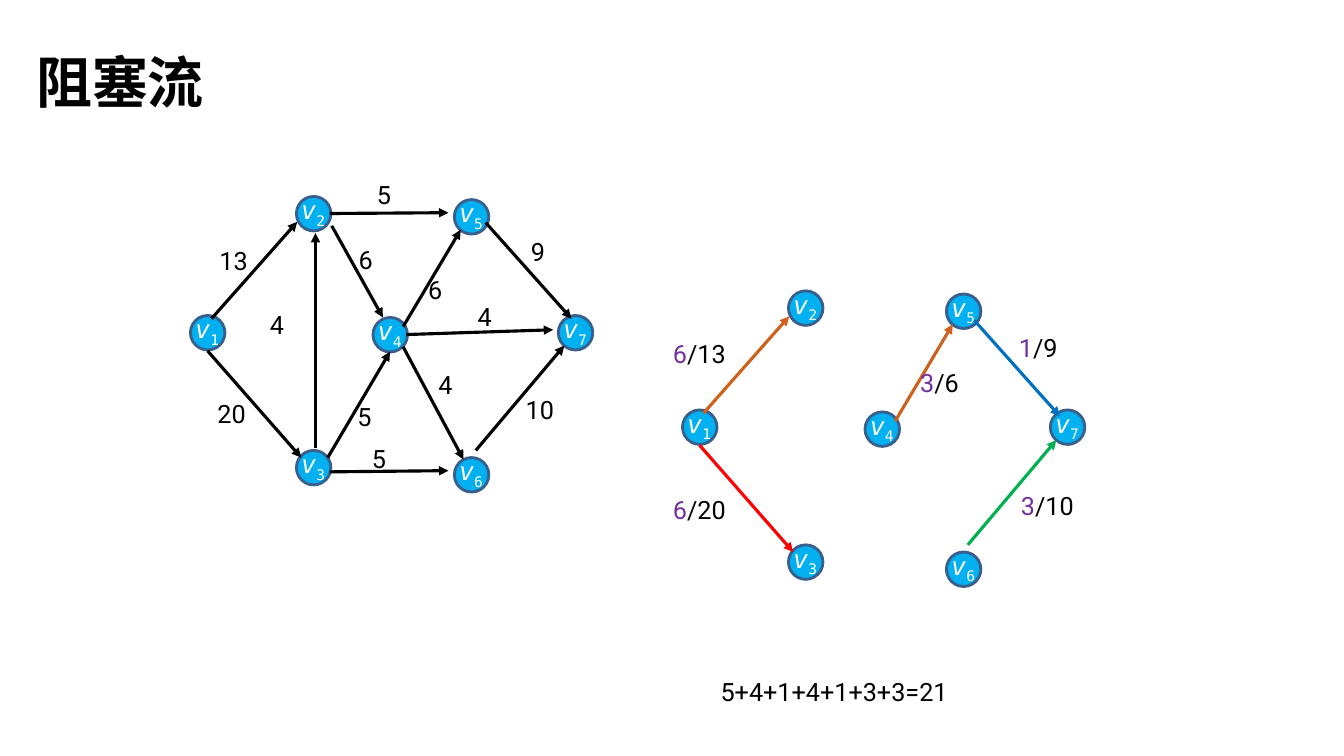
from lxml import etree
from pptx import Presentation
from pptx.dml.color import RGBColor
from pptx.enum.shapes import MSO_CONNECTOR, MSO_SHAPE
from pptx.enum.text import MSO_ANCHOR, MSO_AUTO_SIZE
from pptx.oxml.ns import qn
from pptx.util import Cm, Pt

OVAL = MSO_SHAPE.OVAL
LINE = MSO_CONNECTOR.STRAIGHT
TOP = MSO_ANCHOR.TOP
MIDDLE = MSO_ANCHOR.MIDDLE
GROW = MSO_AUTO_SIZE.SHAPE_TO_FIT_TEXT
FIXED = MSO_AUTO_SIZE.NONE

COLORS = {
    "black": "000000", "white": "FFFFFF", "sky": "00B0F0", "rim": "3A5F8C",
    "rust": "CE611B", "red": "FF0000", "green": "00B050", "blue": "0070C0",
    "purple": "7030A0",
}
STYLES = {
    "title": {"name": "Arial", "size": Pt(40), "bold": True},
    "label": {"name": "Roboto", "size": Pt(18)},
    "node": {"name": "DejaVu Sans Mono", "size": Pt(18), "italic": True},
    "sub": {"name": "DejaVu Sans Mono", "size": Pt(18), "italic": False},
}

NODES = {
    "1": (4.8, 7.95), "2": (7.47, 4.95), "3": (7.47, 11.35), "4": (9.4, 8),
    "5": (11.45, 5.03), "6": (11.45, 11.53), "7": (14.07, 7.95),
}
EDGES = {
    "12": (5.33, 8.03, 7.49, 5.59),
    "13": (5.23, 8.84, 7.59, 11.53),
    "24": (8.36, 5.69, 9.65, 8),
    "25": (8.31, 5.38, 11.3, 5.36),
    "32": (7.95, 11.28, 7.95, 5.87),
    "34": (8.26, 11.53, 9.83, 8.86),
    "36": (8.31, 11.89, 11.3, 11.86),
    "46": (10.16, 8.74, 11.68, 11.58),
    "67": (11.99, 11.35, 14.22, 8.71),
    "47": (10.24, 8.43, 13.94, 8.31),
    "45": (10.16, 8.23, 11.61, 5.79),
    "57": (12.24, 5.61, 14.4, 8.03),
}
LIMITS = {
    "12": ("13", 5.28, 6.05, 2), "13": ("20", 5.23, 9.91, 1.27),
    "32": ("4", 6.55, 7.67, 2), "25": ("5", 9.25, 4.39, 2),
    "24": ("6", 8.79, 6.02, 2), "45": ("6", 10.54, 6.78, 2),
    "34": ("5", 8.76, 9.98, 2), "36": ("5", 9.12, 11.05, 2),
    "46": ("4", 10.8, 9.19, 2), "47": ("4", 11.79, 7.47, 2),
    "67": ("10", 13, 9.8, 2), "57": ("9", 13.13, 5.84, 2),
}
FLOWS = {
    "12": ("6", "rust", 16.71, 8.41, 2.4, 0, 0),
    "13": ("6", "red", 16.71, 12.32, 2.4, 0, 0),
    "67": ("3", "green", 25.48, 12.22, 2, 0, 0),
    "45": ("3", "rust", 22.94, 9.14, 2, 0, 0),
    "57": ("1", "blue", 25.43, 8.26, 2, -0.09, 0.08),
}
SHIFT = (12.4, 2.38)
DOT = 0.87
ROW = 1.01


class Sketch:
    def __init__(self, slide):
        self.shapes = slide.shapes

    def paint(self, name):
        return RGBColor.from_string(COLORS[name])

    def text(self, x, y, wide, high, runs, anchor=TOP, fit=GROW):
        box = self.shapes.add_textbox(Cm(x), Cm(y), Cm(wide), Cm(high))
        frame = box.text_frame
        form = {"word_wrap": True, "auto_size": fit, "vertical_anchor": anchor}
        for key, value in form.items():
            setattr(frame, key, value)
        for words, style, color in runs:
            run = frame.paragraphs[0].add_run()
            run.text = words
            for key, value in STYLES[style].items():
                setattr(run.font, key, value)
            run.font.color.rgb = self.paint(color)
            if style == "sub":
                run._r.get_or_add_rPr().set("baseline", "-25000")

    def node(self, name, x, y):
        dot = self.shapes.add_shape(OVAL, Cm(x), Cm(y), Cm(DOT), Cm(DOT))
        dot.shadow.inherit = False
        dot.fill.solid()
        dot.fill.fore_color.rgb = self.paint("sky")
        dot.line.color.rgb = self.paint("rim")
        dot.line.width = Pt(2)
        self.text(x - 0.13, y - 0.17, 1.32, ROW,
                  [("v", "node", "white"), (name, "sub", "white")])

    def arrow(self, ends, color="black", dx=0, dy=0):
        x1, y1, x2, y2 = ends
        link = self.shapes.add_connector(
            LINE, Cm(x1 + dx), Cm(y1 + dy), Cm(x2 + dx), Cm(y2 + dy))
        link.line.color.rgb = self.paint(color)
        link.line.width = Pt(2.25)
        tail = etree.SubElement(link.line._get_or_add_ln(), qn("a:tailEnd"))
        tail.set("type", "triangle")
        etree.SubElement(link._element.spPr, qn("a:effectLst"))


def main():
    deck = Presentation()
    deck.slide_width = Cm(33.87)
    deck.slide_height = Cm(19.05)
    art = Sketch(deck.slides.add_slide(deck.slide_layouts[6]))
    right, down = SHIFT

    art.text(0.66, 0.51, 16.56, 3.07, [("阻塞流", "title", "black")], MIDDLE, FIXED)

    for dx, dy in (SHIFT, (0, 0)):
        for name, (x, y) in NODES.items():
            art.node(name, x + dx, y + dy)

    for ends in EDGES.values():
        art.arrow(ends)
    for limit, x, y, wide in LIMITS.values():
        art.text(x, y, wide, ROW, [(limit, "label", "black")])

    for edge, (flow, color, x, y, wide, dx, dy) in FLOWS.items():
        art.arrow(EDGES[edge], color, right + dx, down + dy)
        art.text(x, y, wide, ROW, [(flow, "label", "purple"),
                                   ("/" + LIMITS[edge][0], "label", "black")])

    art.text(17.91, 16.92, 9.53, ROW, [("5+4+1+4+1+3+3=21", "label", "black")])
    deck.save("out.pptx")


if __name__ == "__main__":
    main()
